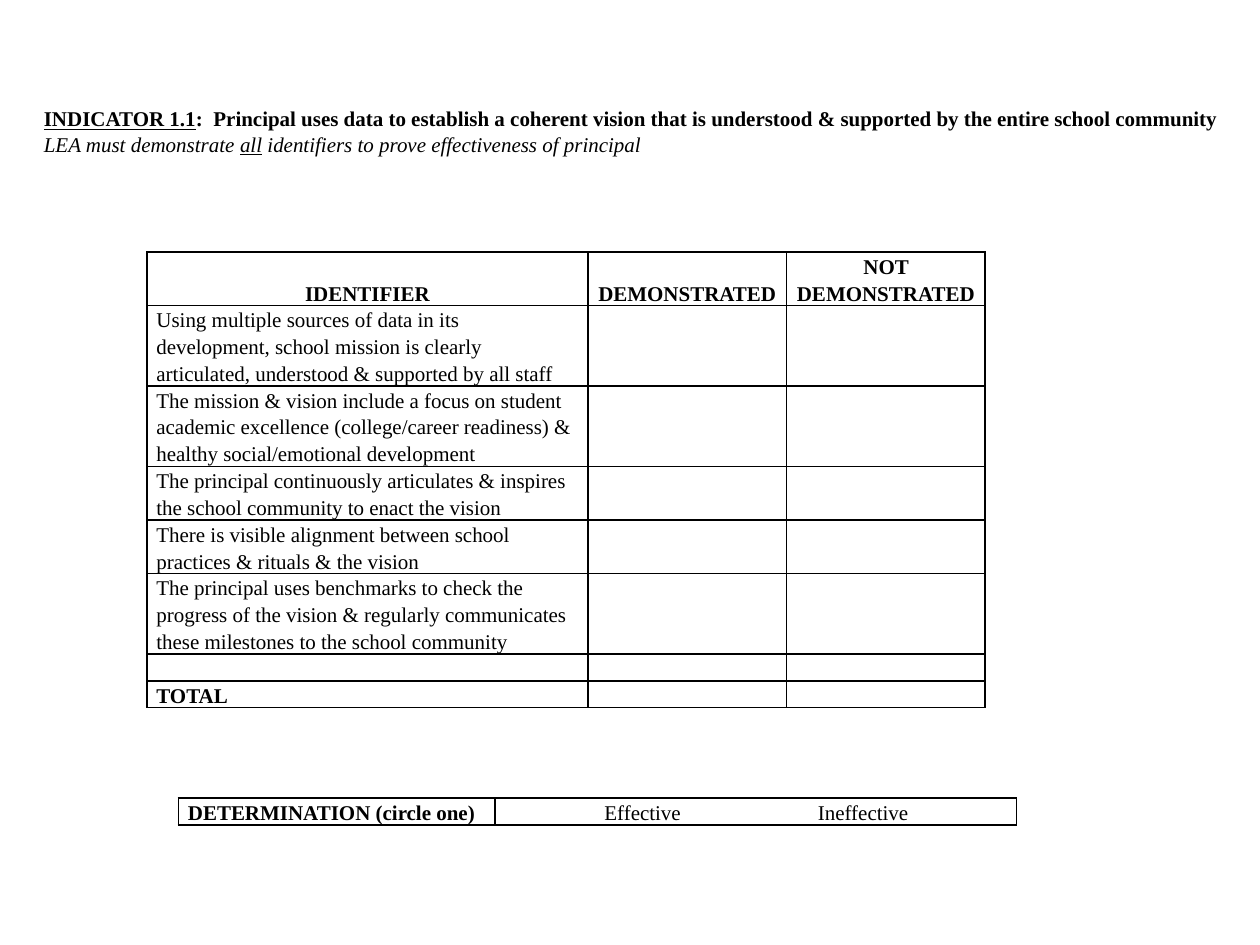
from pptx import Presentation
from pptx.dml.color import RGBColor
from pptx.enum.text import MSO_ANCHOR as Anchor, PP_ALIGN as Align
from pptx.oxml.ns import qn
from pptx.util import Pt
from lxml.etree import SubElement

LINE = 15.3
HEADERS = ["IDENTIFIER", "DEMONSTRATED", "NOT DEMONSTRATED"]
IDENTIFIERS = [
    ("Using multiple sources of data in its development, school mission is clearly "
     "articulated, understood & supported by all staff", 3),
    ("The mission & vision include a focus on student academic excellence "
     "(college/career readiness) & healthy social/emotional development", 3),
    ("The principal continuously articulates & inspires the school community to enact the vision", 2),
    ("There is visible alignment between school practices & rituals & the vision", 2),
    ("The principal uses benchmarks to check the progress of the vision & regularly "
     "communicates these milestones to the school community", 3),
    ("", 1),
    ("TOTAL", 1),
]
HEADING = [
    [("INDICATOR 1.1", "bu"),
     (":  Principal uses data to establish a coherent vision that is understood "
      "& supported by the entire school community", "b")],
    [("LEA must demonstrate ", "i"), ("all", "iu"),
     (" identifiers to prove effectiveness of principal", "i")],
]


def colour(value):
    return RGBColor.from_string(value)


class Form:
    """Builds a printed form in one typeface on the current page."""

    font, size, ink = "Times New Roman", 12, "000000"

    def __init__(self, page):
        self.page = page

    def style(self, span, marks=""):
        font = span.font
        font.name, font.size = self.font, Pt(self.size)
        font.color.rgb = colour(self.ink)
        font.bold, font.italic, font.underline = ("b" in marks, "i" in marks, "u" in marks)

    def text(self, left, top, width, height, paragraphs):
        box = self.page.shapes.add_textbox(Pt(left), Pt(top), Pt(width), Pt(height))
        frame = box.text_frame
        frame.word_wrap = True
        for index, spans in enumerate(paragraphs):
            para = frame.add_paragraph() if index else frame.paragraphs[0]
            for words, marks in spans:
                span = para.add_run()
                span.text = words
                self.style(span, marks)

    def border(self, cell):
        properties = cell._tc.get_or_add_tcPr()
        for position, side in enumerate(("lnL", "lnR", "lnT", "lnB")):
            line = properties.makeelement(qn(f"a:{side}"), {"w": str(Pt(1))})
            fill = SubElement(line, qn("a:solidFill"))
            SubElement(fill, qn("a:srgbClr"), val=self.ink)
            properties.insert(position, line)

    def cell(self, cell, words, marks="", align=Align.LEFT):
        cell.fill.background()
        self.border(cell)
        cell.margin_left = cell.margin_right = Pt(5.4)
        cell.margin_top = cell.margin_bottom = 0
        cell.text_frame.text = words
        para = cell.text_frame.paragraphs[0]
        para.alignment, para.line_spacing = align, 1.15
        for span in para.runs:
            self.style(span, marks)
        if not words:
            SubElement(para._p, qn("a:endParaRPr"), sz=str(self.size * 100))
        return para

    def table(self, left, top, widths, lines):
        frame = self.page.shapes.add_table(
            len(lines), len(widths), Pt(left), Pt(top), Pt(sum(widths)), Pt(sum(lines) * LINE))
        table = frame.table
        table.first_row = table.horz_banding = False
        for column, width in zip(table.columns, widths):
            column.width = Pt(width)
        for row, count in zip(table.rows, lines):
            row.height = Pt(count * LINE)
        return table

    def tabs(self, para, stops):
        tab_list = SubElement(para._p.get_or_add_pPr(), qn("a:tabLst"))
        for stop in stops:
            SubElement(tab_list, qn("a:tab"), pos=str(Pt(stop)), algn="l")


def main():
    deck = Presentation()
    deck.slide_width, deck.slide_height = Pt(720), Pt(540)
    form = Form(deck.slides.add_slide(deck.slide_layouts[6]))

    rubric = form.table(84, 144, [252, 113.5, 113.5], [2] + [count for _, count in IDENTIFIERS])
    for column, words in enumerate(HEADERS):
        header = rubric.cell(0, column)
        form.cell(header, words, "b", Align.CENTER)
        header.vertical_anchor = Anchor.BOTTOM
    for row, (words, _) in enumerate(IDENTIFIERS, 1):
        form.cell(rubric.cell(row, 0), words, "b" if words == "TOTAL" else "")
        for column in (1, 2):
            form.cell(rubric.cell(row, column), "")

    verdict = form.table(102, 456, [181, 298], [1])
    form.cell(verdict.cell(0, 0), "DETERMINATION (circle one)", "b")
    choices = form.cell(verdict.cell(0, 1), "\tEffective\tIneffective")
    form.tabs(choices, [57, 179])

    form.text(18, 57, 720, 36, HEADING)
    deck.save("out.pptx")


if __name__ == "__main__":
    main()
